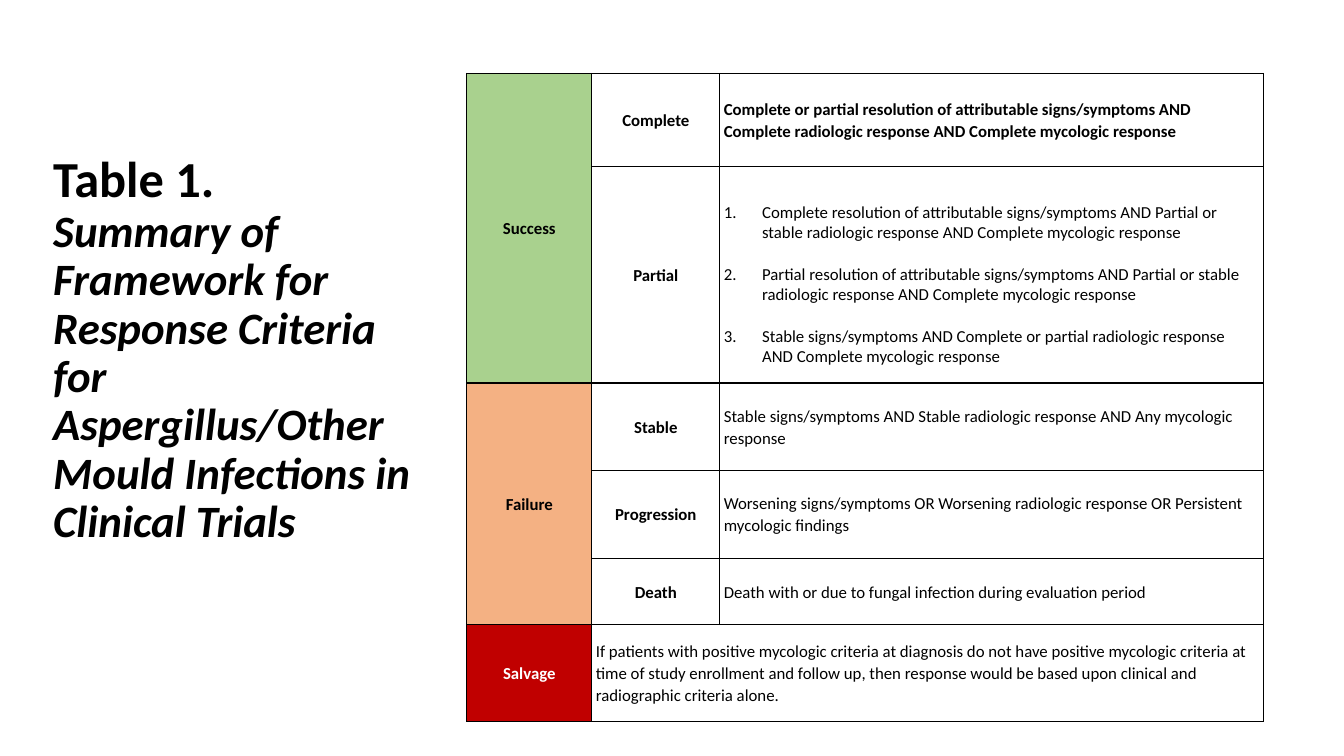
from lxml import etree
from pptx import Presentation
from pptx import util as u
from pptx.dml.color import RGBColor
from pptx.enum import text
from pptx.oxml import ns

BLACK = RGBColor(0x00, 0x00, 0x00)
WHITE = RGBColor(0xFF, 0xFF, 0xFF)
GREEN = RGBColor(0xA9, 0xD1, 0x8E)
ORANGE = RGBColor(0xF4, 0xB1, 0x83)
RED = RGBColor(0xC0, 0x00, 0x00)
FONT = "Calibri"

COLUMNS = [1.24, 1.27, 5.39]
ROWS = [0.92, 2.15, 0.87, 0.87, 0.66, 0.96]
OUTCOMES = [
    ("Success", 0, 1, GREEN, BLACK),
    ("Failure", 2, 4, ORANGE, BLACK),
    ("Salvage", 5, 5, RED, WHITE),
]
RESPONSES = ["Complete", "Partial", "Stable", "Progression", "Death"]
CRITERIA = [
    ["Complete or partial resolution of attributable signs/symptoms AND "
     "Complete radiologic response AND Complete mycologic response"],
    ["Complete resolution of attributable signs/symptoms AND Partial or "
     "stable radiologic response AND Complete mycologic response",
     "Partial resolution of attributable signs/symptoms AND Partial or "
     "stable radiologic response AND Complete mycologic response",
     "Stable signs/symptoms AND Complete or partial radiologic response "
     "AND Complete mycologic response"],
    ["Stable signs/symptoms AND Stable radiologic response AND Any "
     "mycologic response"],
    ["Worsening signs/symptoms OR Worsening radiologic response OR "
     "Persistent mycologic findings"],
    ["Death with or due to fungal infection during evaluation period"],
]
SALVAGE = ("If patients with positive mycologic criteria at diagnosis do not have "
           "positive mycologic criteria at time of study enrollment and follow up, "
           "then response would be based upon clinical and radiographic criteria alone.")


def style_font(font, size, color=BLACK, bold=False, italic=False):
    """Set the face, size, colour and weight of a font."""
    font.name, font.size = FONT, u.Pt(size)
    font.bold, font.italic = bold, italic
    font.color.rgb = color


def add_title(slide, left, top, width, height):
    """Place the table's number and caption in the given box."""
    frame = slide.shapes.add_textbox(left, top, width, height).text_frame
    frame.word_wrap = True
    frame.vertical_anchor = text.MSO_ANCHOR.MIDDLE
    caption = frame.paragraphs[0]
    caption.line_spacing = 0.9
    number = caption.add_run()
    number.text = "Table 1."
    style_font(number.font, 36, bold=True)
    for line in ("Summary of", "Framework for Response Criteria for "
                 "Aspergillus/Other Mould Infections in Clinical Trials"):
        caption.add_line_break()
        subject = caption.add_run()
        subject.text = line
        style_font(subject.font, 32, bold=True, italic=True)


def number_item(item):
    """Give a paragraph an automatic number and a hanging indent."""
    properties = item._p.get_or_add_pPr()
    properties.set("marL", str(u.Inches(0.38)))
    properties.set("indent", str(u.Inches(-0.38)))
    etree.SubElement(properties, ns.qn("a:buAutoNum"), type="arabicPeriod")


def add_borders(cell):
    """Draw a thin black line on each side of a cell."""
    properties = cell._tc.get_or_add_tcPr()
    for position, side in enumerate(("lnL", "lnR", "lnT", "lnB")):
        line = etree.Element(ns.qn(f"a:{side}"), w=str(u.Pt(1)))
        fill = etree.SubElement(line, ns.qn("a:solidFill"))
        etree.SubElement(fill, ns.qn("a:srgbClr"), val=str(BLACK))
        properties.insert(position, line)


def write_cell(cell, lines, color=BLACK, bold=False, centered=False):
    """Write one plain paragraph, or a numbered list, into a cell."""
    numbered = len(lines) > 1
    cell.margin_top = u.Inches(0.2 if numbered else 0)
    frame = cell.text_frame
    for index, line in enumerate(lines):
        paragraph = frame.add_paragraph() if index else frame.paragraphs[0]
        paragraph.text = line
        paragraph.alignment = text.PP_ALIGN.CENTER if centered else text.PP_ALIGN.LEFT
        paragraph.line_spacing = 1.0 if numbered else 1.07
        if numbered:
            paragraph.space_before = u.Pt(15 if index else 0)
            number_item(paragraph)
        style_font(paragraph.font, 12, color, bold)


def add_criteria_table(slide, left, top, width, height):
    """Place the response criteria table in the given box."""
    table = slide.shapes.add_table(len(ROWS), len(COLUMNS), left, top, width, height).table
    table.first_row = table.horz_banding = False
    for column, share in zip(table.columns, COLUMNS):
        column.width = int(width * share / sum(COLUMNS))
    for row, share in zip(table.rows, ROWS):
        row.height = int(height * share / sum(ROWS))
    for cell in table.iter_cells():
        cell.margin_left = cell.margin_right = u.Inches(0.04)
        cell.margin_top = cell.margin_bottom = 0
        cell.vertical_anchor = text.MSO_ANCHOR.MIDDLE
        cell.fill.solid()
        cell.fill.fore_color.rgb = WHITE
        add_borders(cell)

    for outcome, first, last, fill, color in OUTCOMES:
        cell = table.cell(first, 0)
        if last > first:
            cell.merge(table.cell(last, 0))
        cell.fill.fore_color.rgb = fill
        write_cell(cell, [outcome], color, bold=True, centered=True)
    for row, (response, criteria) in enumerate(zip(RESPONSES, CRITERIA)):
        write_cell(table.cell(row, 1), [response], bold=True, centered=True)
        write_cell(table.cell(row, 2), criteria, bold=row == 0)
    salvage = table.cell(len(ROWS) - 1, 1)
    salvage.merge(table.cell(len(ROWS) - 1, 2))
    write_cell(salvage, [SALVAGE])


def main():
    """Build the slide and save it."""
    deck = Presentation()
    deck.slide_width, deck.slide_height = u.Inches(13.33), u.Inches(7.5)
    slide = deck.slides.add_slide(deck.slide_layouts[6])
    add_title(slide, u.Inches(0.43), u.Inches(1.02), u.Inches(3.87), u.Inches(4.92))
    add_criteria_table(slide, u.Inches(4.63), u.Inches(0.73),
                       u.Inches(sum(COLUMNS)), u.Inches(sum(ROWS)))
    deck.save("out.pptx")


if __name__ == "__main__":
    main()
